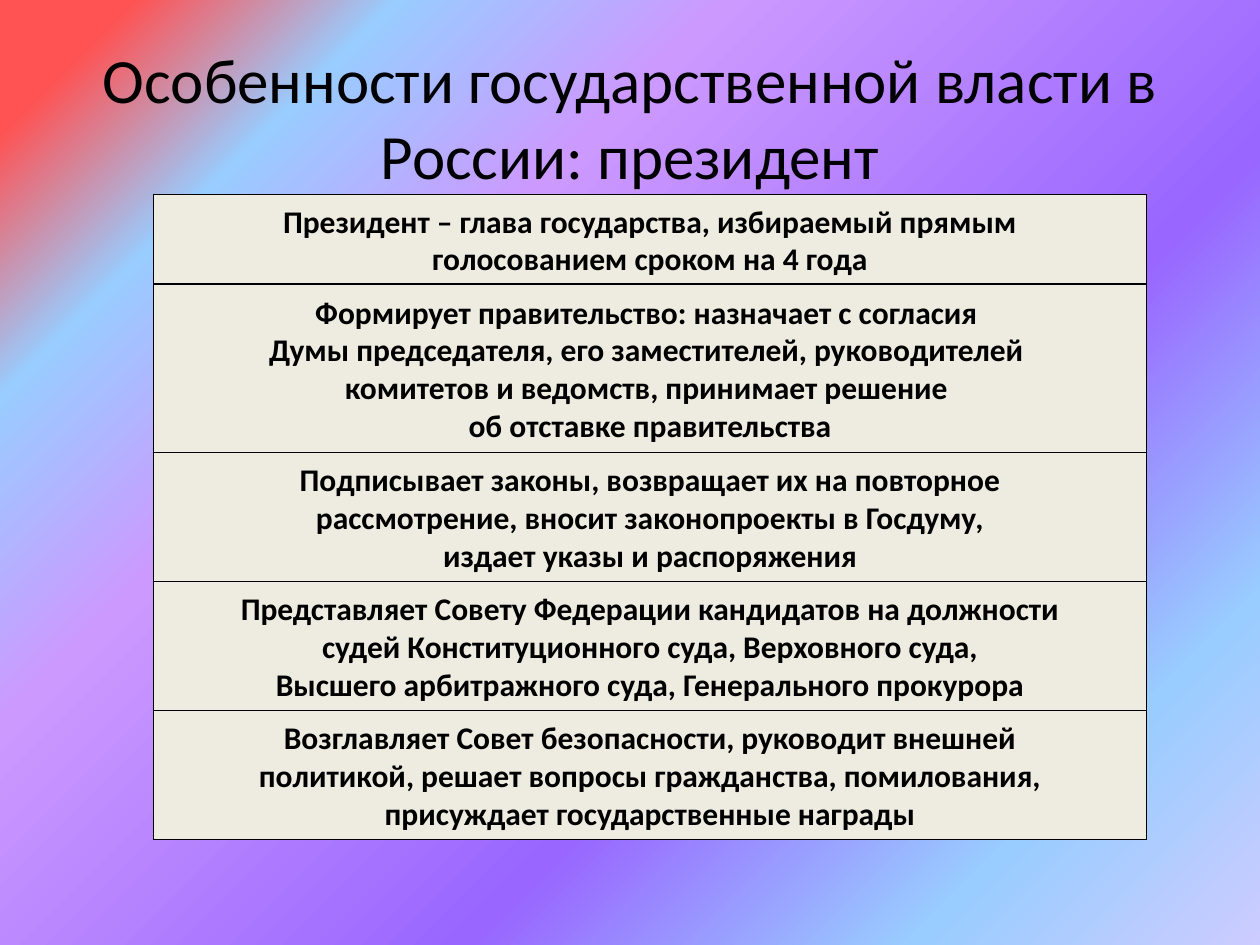
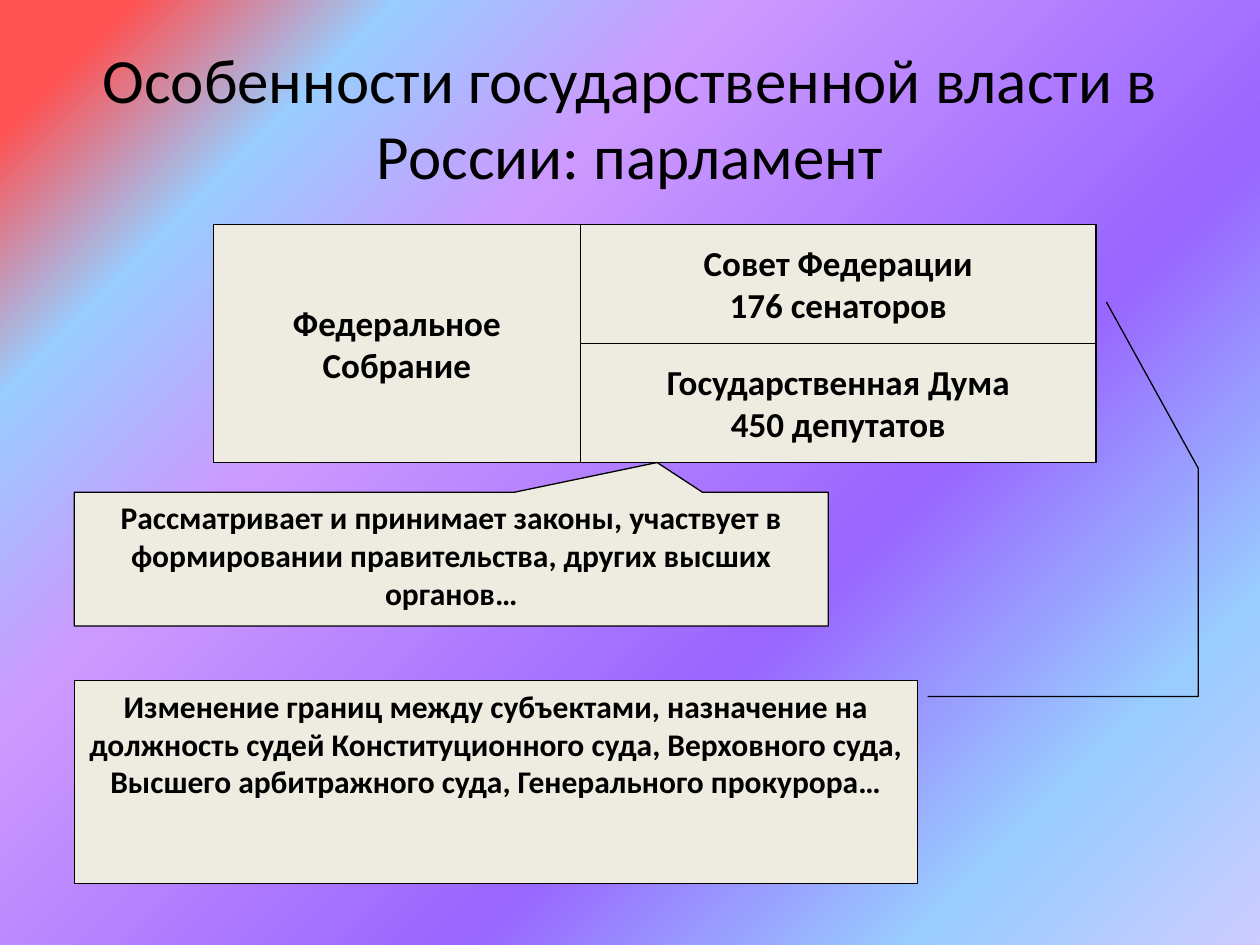
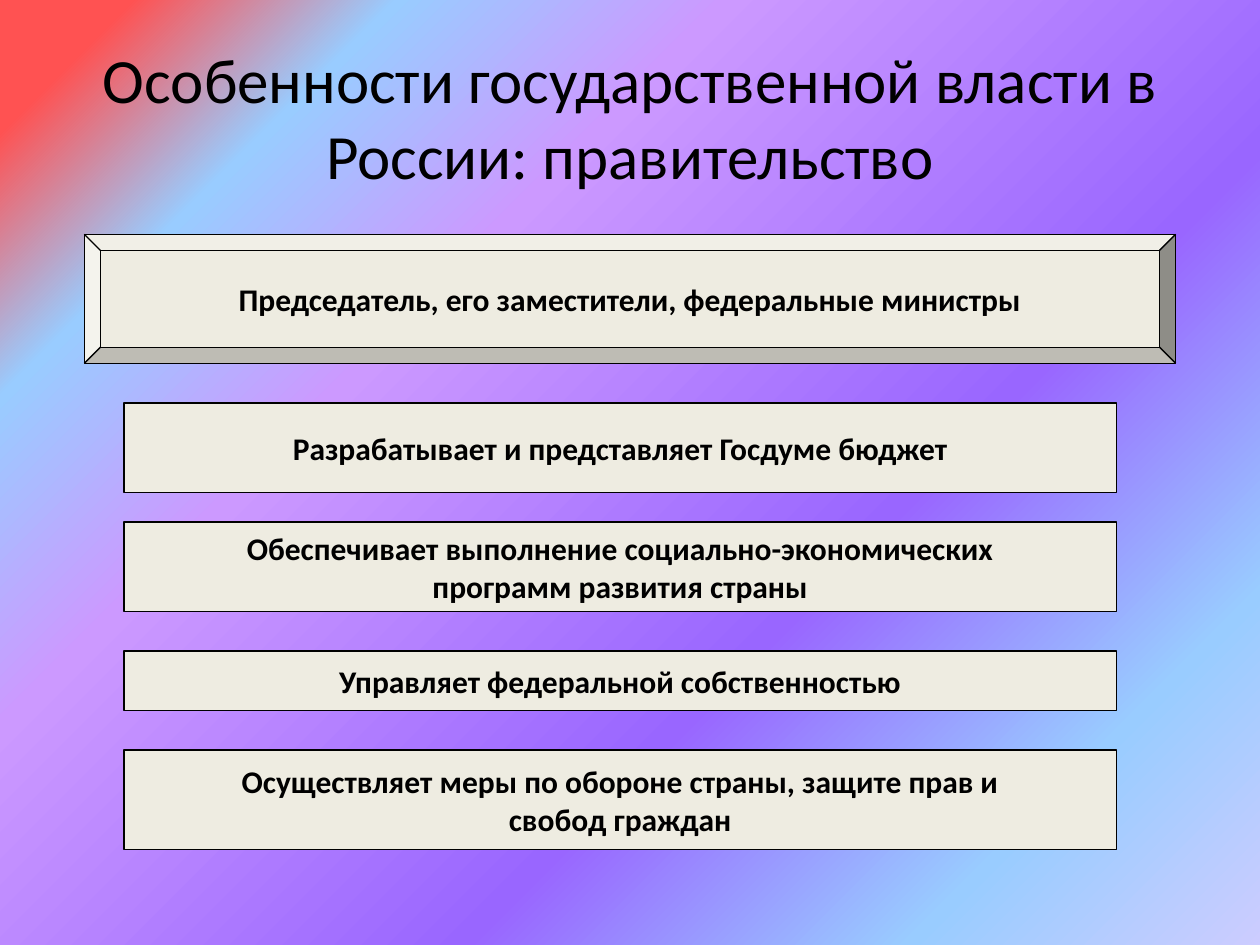
import pptx
import pptx.dml.color
import pptx.enum.shapes
import pptx.enum.text
import pptx.oxml
import pptx.oxml.ns
import pptx.util

Pt = pptx.util.Pt
KIND = pptx.enum.shapes.MSO_SHAPE
ANCHOR = pptx.enum.text.MSO_ANCHOR
CENTER = pptx.enum.text.PP_ALIGN.CENTER

FONT = "Calibri"
INK = "000000"
CREAM = "EEECE1"
STOPS = [(0, "CCCCFF"), (16, "99CCFF"), (36, "9966FF"),
         (67, "CC99FF"), (82, "99CCFF"), (94, "FF5252")]
TITLE = "Особенности государственной власти в России: "

POWERS = [
    (51, "Президент – глава государства, избираемый прямым\n"
         "голосованием сроком на 4 года"),
    (96.2, "Формирует правительство: назначает с согласия \n"
           "Думы председателя, его заместителей, руководителей \n"
           "комитетов и ведомств, принимает решение \n"
           "об отставке правительства"),
    (73.7, "Подписывает законы, возвращает их на повторное\n"
           "рассмотрение, вносит законопроекты в Госдуму,\n"
           "издает указы и распоряжения"),
    (73.7, "Представляет Совету Федерации кандидатов на должности\n"
           "судей Конституционного суда, Верховного суда,\n"
           "Высшего арбитражного суда, Генерального прокурора"),
    (73.7, "Возглавляет Совет безопасности, руководит внешней\n"
           "политикой, решает вопросы гражданства, помилования,\n"
           "присуждает государственные награды"),
]

UNION = "Федеральное\nСобрание"
HOUSES = ["Совет Федерации\n176 сенаторов", "Государственная Дума\n450 депутатов"]
LAWS = ("Рассматривает и принимает законы, участвует в формировании "
        "правительства, других высших органов…")
POSTS = ("Изменение границ между субъектами, назначение на должность судей "
         "Конституционного суда, Верховного суда,\n"
         "Высшего арбитражного суда, Генерального прокурора…")

CABINET = "Председатель, его заместители, федеральные министры"
DUTIES = [
    (230.3, 51, "Разрабатывает и представляет Госдуме бюджет"),
    (298.3, 51, "Обеспечивает выполнение социально-экономических\n"
                "программ развития страны"),
    (372, 34, "Управляет федеральной собственностью"),
    (428.6, 56.7, "Осуществляет меры по обороне страны, защите прав и\n"
                  "свобод граждан"),
]


def color(code):
    return pptx.dml.color.RGBColor.from_string(code)


def write(shape, text, size, bold, wrap, anchor):
    frame = shape.text_frame
    frame.text = text
    frame.word_wrap = wrap
    frame.vertical_anchor = anchor
    for line in frame.paragraphs:
        line.alignment = CENTER
        for run in line.runs:
            run.font.name = FONT
            run.font.size = Pt(size)
            run.font.bold = bold
            run.font.color.rgb = color(INK)


def add_box(slide, area, text, size=18, kind=KIND.RECTANGLE, bends=(),
            wrap=False, anchor=ANCHOR.MIDDLE):
    box = slide.shapes.add_shape(kind, *map(Pt, area))
    box.shadow.inherit = False
    box.fill.solid()
    box.fill.fore_color.rgb = color(CREAM)
    box.line.color.rgb = color(INK)
    box.line.width = Pt(0.75)
    for index, bend in enumerate(bends):
        box.adjustments[index] = bend
    write(box, text, size, True, wrap, anchor)


def add_note(slide, area, text, kind, bends):
    add_box(slide, area, text, kind=kind, bends=bends, wrap=True, anchor=ANCHOR.TOP)


def paint(layout):
    stops = "".join(f'<a:gs pos="{pos * 1000}"><a:srgbClr val="{code}"/></a:gs>'
                    for pos, code in STOPS)
    layout.element.cSld.insert(0, pptx.oxml.parse_xml(
        f'<p:bg {pptx.oxml.ns.nsdecls("p", "a")}><p:bgPr>'
        f'<a:gradFill rotWithShape="1"><a:gsLst>{stops}</a:gsLst>'
        '<a:path path="circle"><a:fillToRect l="100000" t="100000"/></a:path>'
        '</a:gradFill><a:effectLst/></p:bgPr></p:bg>'))


def add_slide(deck, layout, topic):
    slide = deck.slides.add_slide(layout)
    title = slide.shapes.add_textbox(Pt(36), Pt(21.6), Pt(648), Pt(90))
    write(title, TITLE + topic, 36, False, True, ANCHOR.MIDDLE)
    return slide


def add_leader(deck, layout):
    slide = add_slide(deck, layout, "президент")
    top = 111.3
    for height, text in POWERS:
        add_box(slide, (87.9, top, 567.2, height), text)
        top += height


def add_houses(deck, layout):
    slide = add_slide(deck, layout, "парламент")
    left, top, wide, high = 121.9, 128.2, 209.8, 68
    add_box(slide, (left, top, wide, high * 2), UNION, 20)
    for row, text in enumerate(HOUSES):
        add_box(slide, (left + wide, top + row * high, 294.6, high), text, 20)
    add_note(slide, (42.5, 281.3, 430.8, 76.4), LAWS,
             KIND.RECTANGULAR_CALLOUT, (0.273, -0.723))
    add_note(slide, (42.5, 389, 481.8, 116), POSTS, KIND.LINE_CALLOUT_3,
             (0.078, 1.012, 0.078, 1.333, -1.046, 1.333, -1.866, 1.224))


def add_cabinet(deck, layout):
    slide = add_slide(deck, layout, "правительство")
    add_box(slide, (48.2, 133.9, 623.6, 73.7), CABINET, kind=KIND.BEVEL, bends=(0.125,))
    for top, height, text in DUTIES:
        add_box(slide, (70.8, top, 567.2, height), text)


def main():
    deck = pptx.Presentation()
    deck.slide_width, deck.slide_height = Pt(720), Pt(540)
    blank = deck.slide_layouts[6]
    paint(blank)
    for build in (add_leader, add_houses, add_cabinet):
        build(deck, blank)
    deck.save("out.pptx")


if __name__ == "__main__":
    main()
